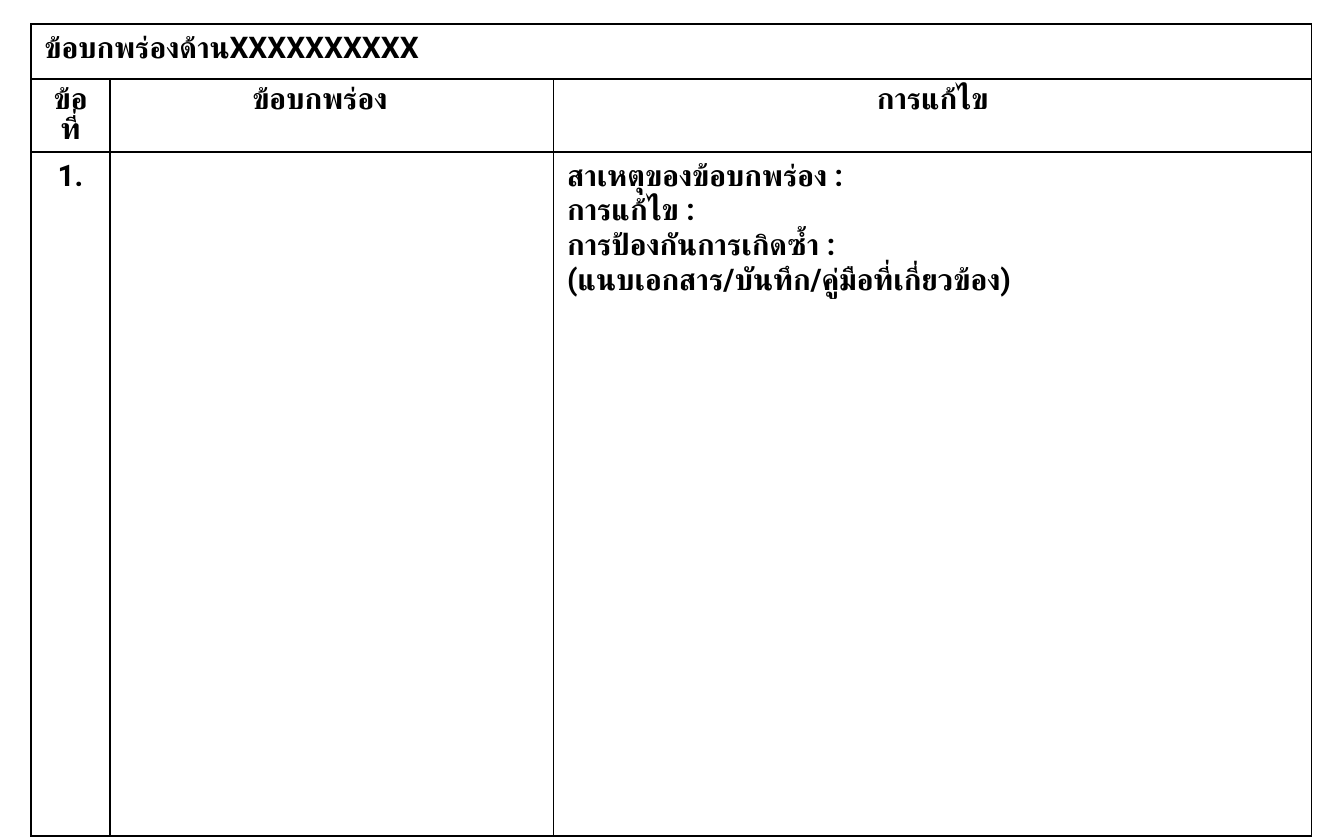
from dataclasses import dataclass

from lxml import etree
from pptx import Presentation
from pptx.dml.color import RGBColor
from pptx.enum.text import PP_ALIGN
from pptx.oxml.ns import qn
from pptx.util import Inches, Pt

LEFT, CENTER = PP_ALIGN.LEFT, PP_ALIGN.CENTER
BLANK_LAYOUT = 6


@dataclass(frozen=True)
class Theme:
    font: str = "Roboto"
    size: int = 16
    ink: str = "000000"
    border: int = 1


@dataclass(frozen=True)
class CellText:
    row: int
    col: int
    text: str = ""
    align: PP_ALIGN = LEFT
    spacing: float = 1.0
    margin_right: float = 0.1


THEME = Theme()
TABLE_LEFT, TABLE_TOP = 0.23, 0.18
COLS = (0.59, 3.3, 5.64)
ROWS = (0.41, 0.54, 5.09)
HEADER_SPACING = 0.85

CELLS = (
    CellText(0, 0, "ข้อบกพร่องด้านXXXXXXXXXX"),
    # Column headings
    CellText(1, 0, "ข้อที่", CENTER, HEADER_SPACING),
    CellText(1, 1, "ข้อบกพร่อง", CENTER, HEADER_SPACING, 0.28),
    CellText(1, 2, "การแก้ไข", CENTER, HEADER_SPACING),
    # First finding
    CellText(2, 0, "1.", CENTER),
    CellText(2, 2, "\n".join((
        "สาเหตุของข้อบกพร่อง :",
        "การแก้ไข :",
        "การป้องกันการเกิดซ้ำ :",
        "(แนบเอกสาร/บันทึก/คู่มือที่เกี่ยวข้อง)",
    ))),
)


def set_borders(cell) -> None:
    """Put a solid line on every side, ahead of the cell's fill."""
    tc_pr = cell._tc.get_or_add_tcPr()
    for i, side in enumerate(("lnL", "lnR", "lnT", "lnB")):
        ln = etree.Element(qn(f"a:{side}"), w=str(Pt(THEME.border)))
        fill = etree.SubElement(ln, qn("a:solidFill"))
        etree.SubElement(fill, qn("a:srgbClr"), val=THEME.ink)
        tc_pr.insert(i, ln)


def write_cell(cell, item: CellText) -> None:
    cell.margin_right = Inches(item.margin_right)
    cell.text_frame.text = item.text
    for p in cell.text_frame.paragraphs:
        p.alignment = item.align
        p.line_spacing = item.spacing
        for r in p.runs:
            r.font.name = THEME.font
            r.font.size = Pt(THEME.size)
            r.font.bold = True
            r.font.color.rgb = RGBColor.from_string(THEME.ink)
            # Thai text takes the complex-script font
            etree.SubElement(r.font._element, qn("a:cs"), typeface=THEME.font)


def add_findings_table(s) -> None:
    frame = s.shapes.add_table(
        len(ROWS), len(COLS), Inches(TABLE_LEFT), Inches(TABLE_TOP),
        Inches(sum(COLS)), Inches(sum(ROWS)))
    table = frame.table
    table.first_row = table.horz_banding = False
    for column, width in zip(table.columns, COLS):
        column.width = Inches(width)
    for row, height in zip(table.rows, ROWS):
        row.height = Inches(height)
    for cell in table.iter_cells():
        cell.fill.background()
        set_borders(cell)
    table.cell(0, 0).merge(table.cell(0, len(COLS) - 1))
    for item in CELLS:
        write_cell(table.cell(item.row, item.col), item)


def main() -> None:
    prs = Presentation()
    prs.slide_width, prs.slide_height = Inches(10), Inches(6.25)
    s = prs.slides.add_slide(prs.slide_layouts[BLANK_LAYOUT])
    add_findings_table(s)
    prs.save("out.pptx")


if __name__ == "__main__":
    main()
